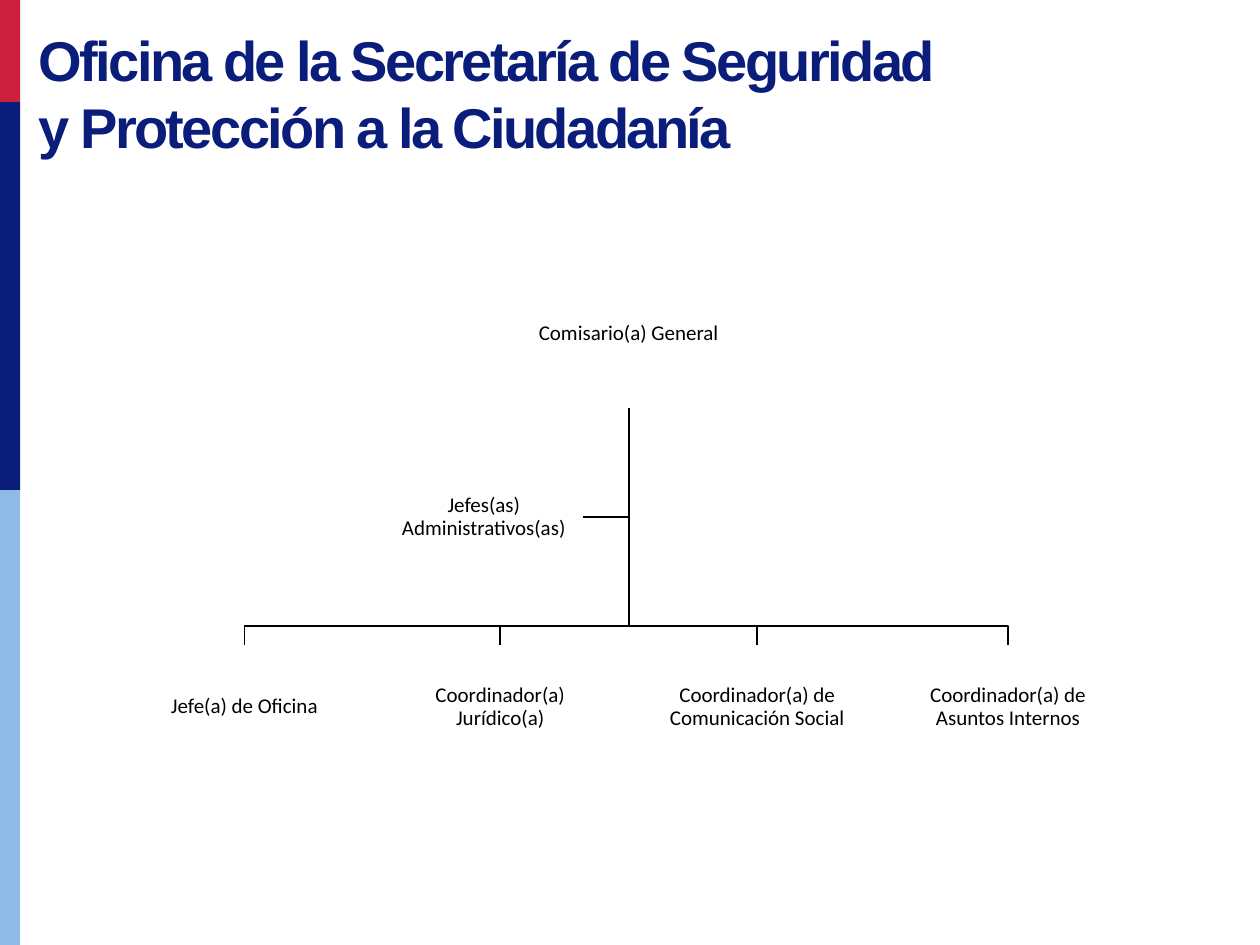
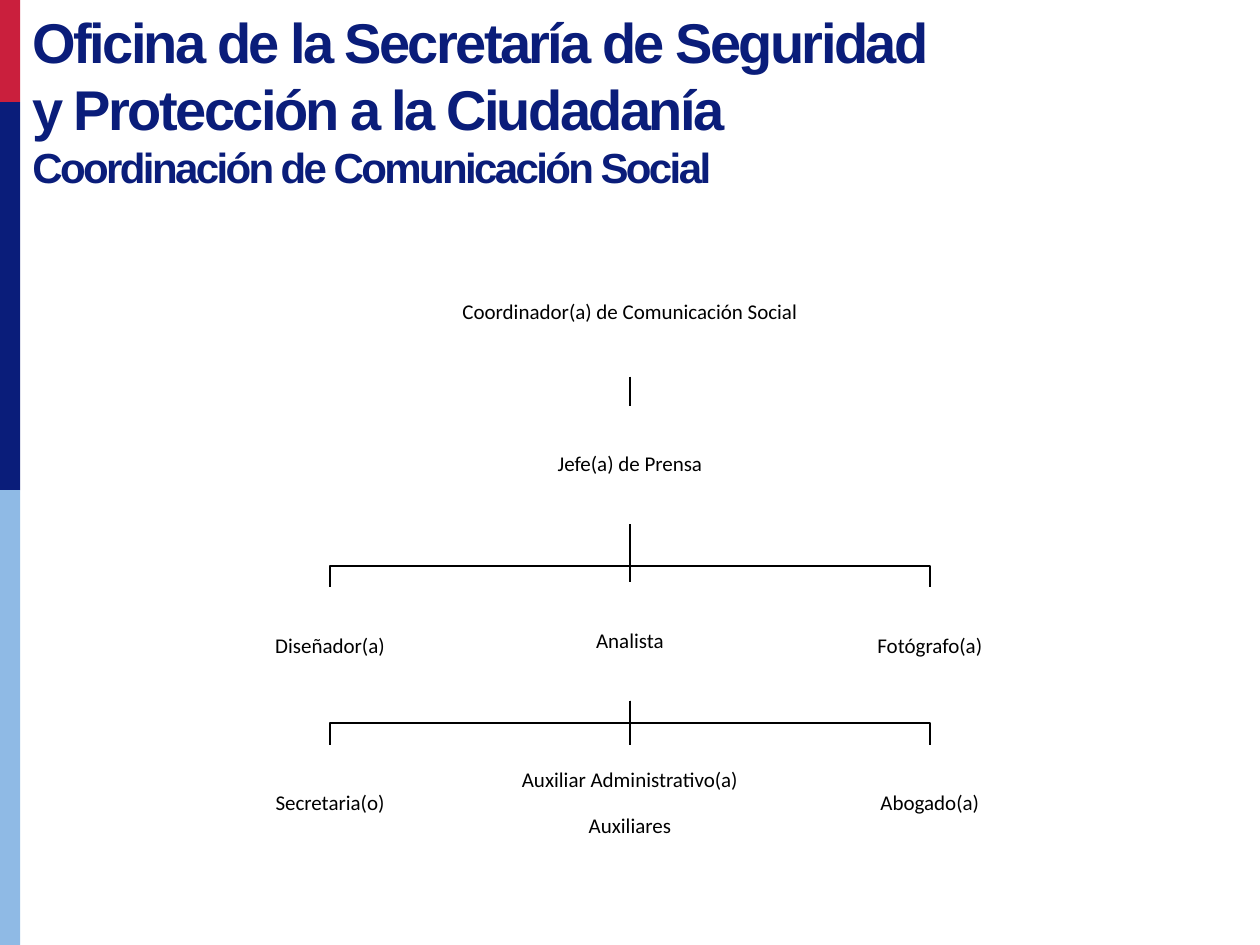
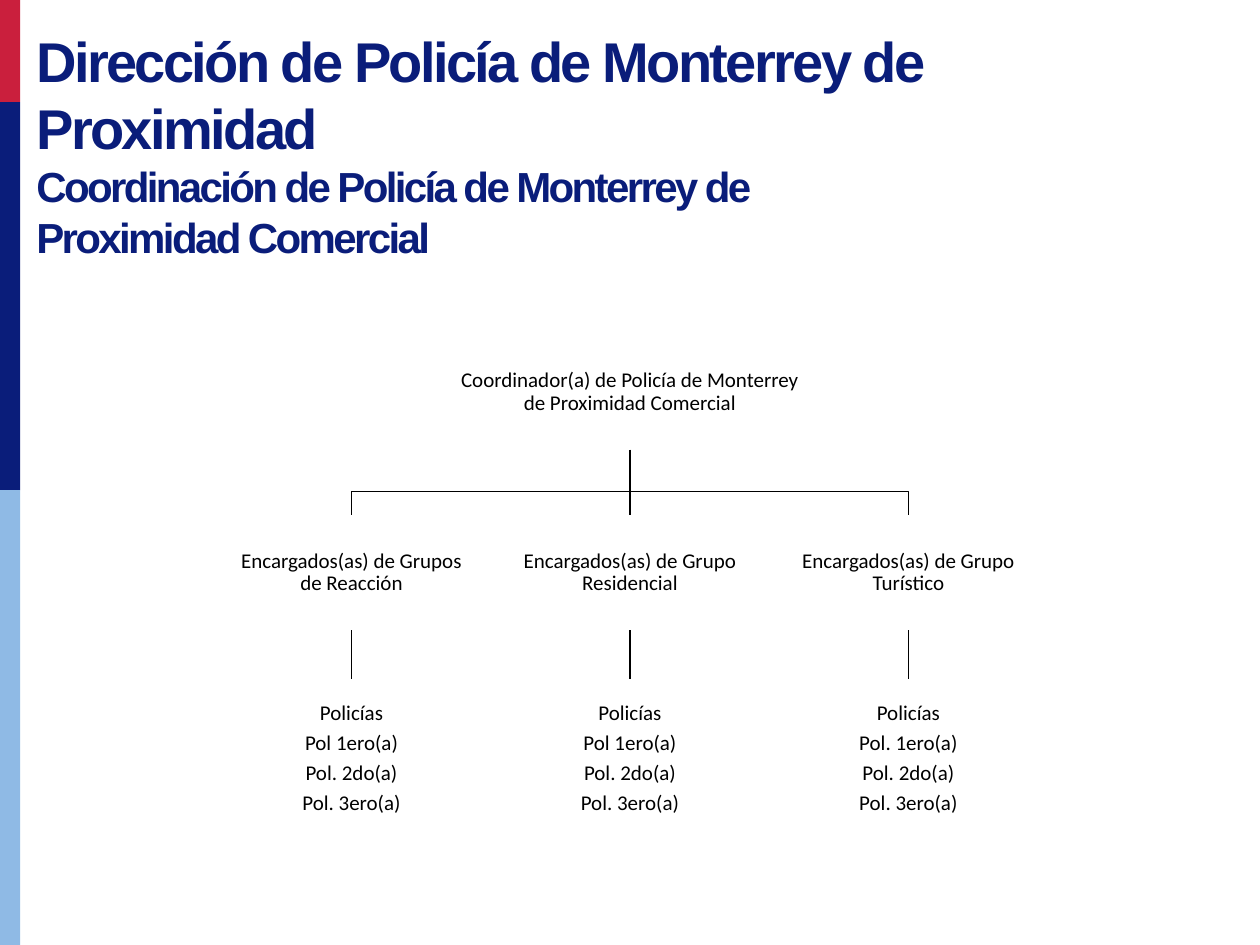
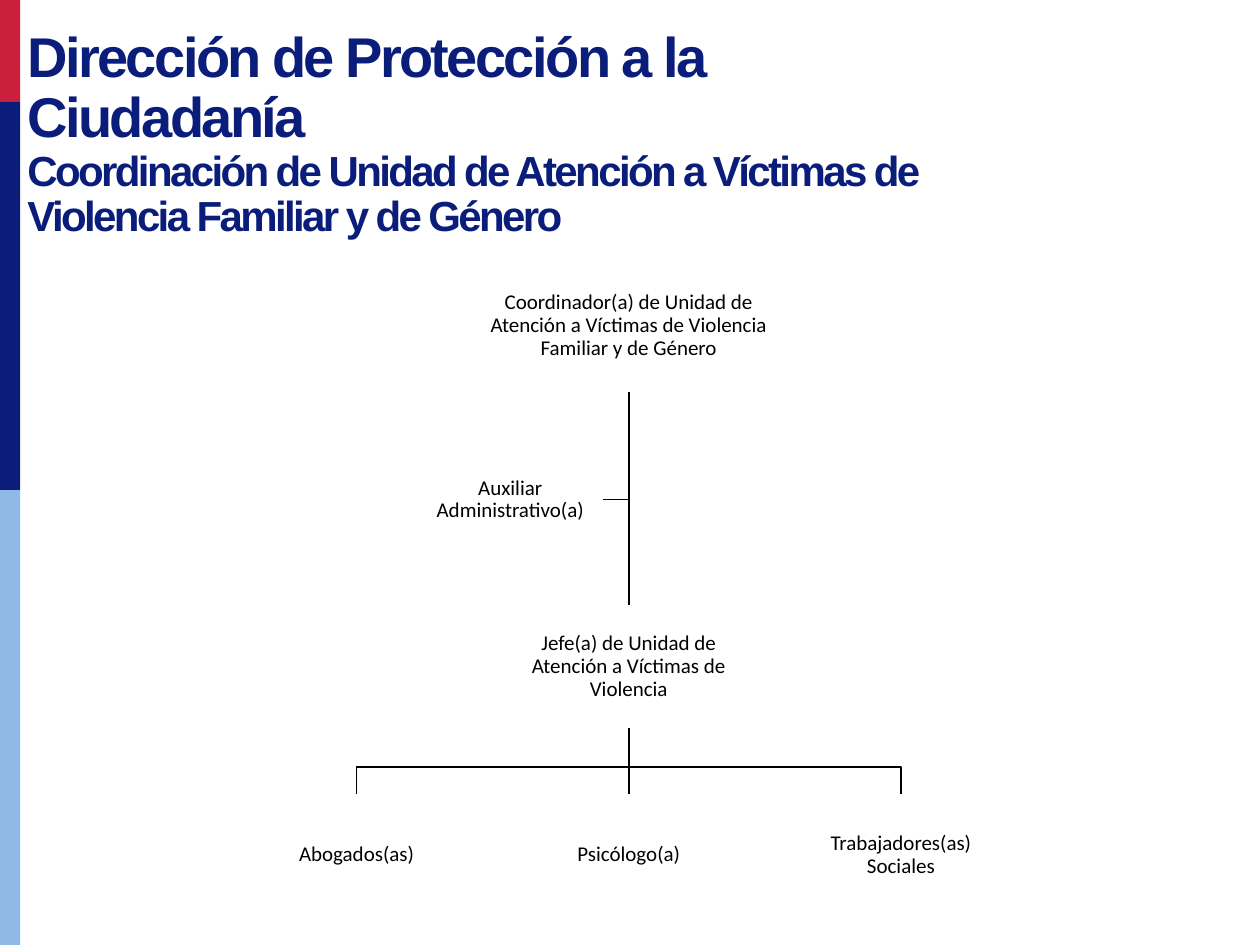
from dataclasses import dataclass

from lxml.etree import SubElement
from pptx import Presentation
from pptx.dml.color import RGBColor
from pptx.enum.shapes import MSO_CONNECTOR, MSO_SHAPE
from pptx.enum.text import MSO_ANCHOR, MSO_AUTO_SIZE, PP_ALIGN
from pptx.oxml.ns import qn
from pptx.util import Inches, Pt


@dataclass(frozen=True)
class Theme:
    red: RGBColor = RGBColor(0xCA, 0x1F, 0x3D)
    navy: RGBColor = RGBColor(0x0A, 0x1D, 0x7A)
    sky: RGBColor = RGBColor(0x8F, 0xBA, 0xE5)
    white: RGBColor = RGBColor(0xFF, 0xFF, 0xFF)
    black: RGBColor = RGBColor(0x00, 0x00, 0x00)
    title_font: str = "Arial"
    node_font: str = "Calibri"
    title_size: int = 32
    subtitle_size: int = 24
    node_size: int = 12
    title_tracking: int = -150
    node_spacing: float = 0.9


class OrgDeck:
    """Holds the theme and the current page of the organisation charts."""

    def __init__(self, theme):
        self.theme = theme
        self.deck = Presentation()
        self.deck.slide_width = Inches(10)
        self.deck.slide_height = Inches(7.5)
        self.page = None

    def new_page(self):
        self.page = self.deck.slides.add_slide(self.deck.slide_layouts[6])
        # Side band in three colours, stacked from top to bottom
        top = 0
        for color, bottom in ((self.theme.red, 0.81), (self.theme.navy, 3.89), (self.theme.sky, 7.5)):
            self.rectangle(0, top, 0.16, bottom - top, color)
            top = bottom

    def rectangle(self, left, top, width, height, color):
        box = self.page.shapes.add_shape(
            MSO_SHAPE.RECTANGLE, Inches(left), Inches(top), Inches(width), Inches(height))
        box.shadow.inherit = False
        box.fill.solid()
        box.fill.fore_color.rgb = color
        box.line.fill.background()
        return box

    def style(self, para, name, size, color, bold=False):
        for span in para.runs:
            span.font.name = name
            span.font.size = Pt(size)
            span.font.bold = bold
            span.font.color.rgb = color

    def title(self, left, top, width, height, heading, subheading=None, spacing=None):
        box = self.page.shapes.add_textbox(
            Inches(left), Inches(top), Inches(width), Inches(height))
        frame = box.text_frame
        frame.word_wrap = True
        frame.auto_size = MSO_AUTO_SIZE.SHAPE_TO_FIT_TEXT
        frame.text = f"{heading}\n{subheading}" if subheading else heading
        sizes = (self.theme.title_size, self.theme.subtitle_size)
        for para, size in zip(frame.paragraphs, sizes):
            para.line_spacing = spacing
            self.style(para, self.theme.title_font, size, self.theme.navy, bold=True)
            for span in para.runs:
                span.font._element.set("spc", str(self.theme.title_tracking))

    def node(self, text, center, top, width, height, gap=0):
        """Position box; gap is the space in points between its paragraphs."""
        box = self.rectangle(center - width / 2, top, width, height, self.theme.white)
        frame = box.text_frame
        frame.word_wrap = True
        frame.vertical_anchor = MSO_ANCHOR.MIDDLE
        frame.margin_left = frame.margin_right = Inches(0.01)
        frame.margin_top = frame.margin_bottom = Inches(0.01)
        frame.text = text
        for index, para in enumerate(frame.paragraphs):
            para.alignment = PP_ALIGN.CENTER
            para.line_spacing = self.theme.node_spacing
            if index and gap:
                para.space_before = Pt(gap)
            self.style(para, self.theme.node_font, self.theme.node_size, self.theme.black)
        return box

    def draw_line(self, line):
        line.color.rgb = self.theme.black
        line.width = Pt(1)

    def link(self, parent, child):
        """Straight line from the bottom of a node to the top of the next."""
        connector = self.page.shapes.add_connector(MSO_CONNECTOR.STRAIGHT, 0, 0, 0, 0)
        connector.begin_connect(parent, 2)
        connector.end_connect(child, 0)
        self.draw_line(connector.line)
        SubElement(connector._element.spPr, qn("a:effectLst"))

    def bent_line(self, start, *points):
        builder = self.page.shapes.build_freeform(*start, scale=1.0)
        builder.add_line_segments(points, close=False)
        outline = builder.convert_to_shape()
        outline.shadow.inherit = False
        outline.fill.background()
        self.draw_line(outline.line)

    def branch(self, parent, children, drop):
        """Link a parent to a row of nodes; the bus runs drop above the row."""
        x, y = parent.left + parent.width // 2, parent.top + parent.height
        for child in children:
            child_x = child.left + child.width // 2
            if abs(child_x - x) < Inches(0.01):
                self.link(parent, child)
            else:
                bus = child.top - Inches(drop)
                self.bent_line((x, y), (x, bus), (child_x, bus), (child_x, child.top))

    def assistant(self, parent, helper):
        """Link a node that stands at the left of the parent's stem."""
        x, y = parent.left + parent.width // 2, parent.top + parent.height
        middle = helper.top + helper.height // 2
        self.bent_line((x, y), (x, middle), (helper.left + helper.width, middle))


OFFICE = "Oficina de la Secretaría de Seguridad y Protección a la Ciudadanía"


def secretariat_office(org):
    org.new_page()
    org.title(0.21, 0.15, 7.35, 1.18, OFFICE)
    chief = org.node("Comisario(a) General", 4.99, 2.06, 2.36, 1.18)
    staff = {
        "Jefe(a) de Oficina": 1.94,
        "Coordinador(a)\nJurídico(a)": 3.97,
        "Coordinador(a) de Comunicación Social": 6.01,
        "Coordinador(a) de Asuntos Internos": 8,
    }
    row = [org.node(text, center, 5.12, 1.72, 0.98) for text, center in staff.items()]
    helper = org.node("Jefes(as) Administrativos(as)", 3.84, 3.67, 1.57, 0.87)
    org.assistant(chief, helper)
    org.branch(chief, row, 0.15)


def social_communication(org):
    org.new_page()
    org.title(0.16, 0.01, 7.46, 1.58, OFFICE, "Coordinación de Comunicación Social")
    middle, step = 5, 2.38
    coordinator = org.node("Coordinador(a) de Comunicación Social", middle, 1.97, 3.3, 1.02)
    press = org.node("Jefe(a) de Prensa", middle, 3.22, 2.36, 0.94)
    designer = org.node("Diseñador(a)", middle - step, 4.66, 2.04, 0.94)
    analyst = org.node("Analista", middle, 4.62, 2.04, 0.94)
    photographer = org.node("Fotógrafo(a)", middle + step, 4.66, 2.04, 0.94)
    support_texts = ("Secretaria(o)", "Auxiliar Administrativo(a)\nAuxiliares", "Abogado(a)")
    support = [org.node(text, middle + step * column, 5.91, 2.04, 0.94, gap=13)
               for column, text in enumerate(support_texts, -1)]
    org.link(coordinator, press)
    org.branch(press, (designer, analyst, photographer), 0.17)
    org.branch(analyst, support, 0.17)


def commercial_police(org):
    org.new_page()
    org.title(0.19, 0.16, 7.46, 1.99, "Dirección de Policía de Monterrey de Proximidad",
              "Coordinación de Policía de Monterrey de Proximidad Comercial")
    middle, step = 5, 2.21
    coordinator = org.node("Coordinador(a) de Policía de Monterrey\vde Proximidad Comercial",
                           middle, 2.66, 3, 0.91)
    groups = (
        ("Encargados(as) de Grupos de Reacción", "Pol"),
        ("Encargados(as) de Grupo Residencial", "Pol"),
        ("Encargados(as) de Grupo Turístico", "Pol."),
    )
    leaders = []
    for column, (leader_text, first_rank) in enumerate(groups, -1):
        center = middle + step * column
        leader = org.node(leader_text, center, 4.09, 1.83, 0.91)
        ranks = f"Policías\n{first_rank} 1ero(a)\nPol. 2do(a)\nPol. 3ero(a)"
        org.link(leader, org.node(ranks, center, 5.39, 1.83, 1.26, gap=4.2))
        leaders.append(leader)
    org.branch(coordinator, leaders, 0.19)


def victim_support(org):
    org.new_page()
    org.title(0.12, 0.18, 7.46, 1.31, "Dirección de Protección a la Ciudadanía",
              "Coordinación de Unidad de Atención a Víctimas de Violencia Familiar y de Género",
              spacing=0.9)
    middle, step = 4.99, 2.16
    coordinator = org.node(
        "Coordinador(a) de Unidad de Atención a Víctimas de Violencia Familiar y de Género",
        middle, 2.06, 2.34, 1.05)
    head = org.node("Jefe(a) de Unidad de Atención a Víctimas de Violencia",
                    middle, 4.8, 1.89, 0.98)
    team_texts = ("Abogados(as)", "Psicólogo(a)", "Trabajadores(as)\vSociales")
    team = [org.node(text, middle + step * column, 6.3, 1.75, 0.97)
            for column, text in enumerate(team_texts, -1)]
    helper = org.node("Auxiliar Administrativo(a)", 4.05, 3.54, 1.47, 0.85)
    org.assistant(coordinator, helper)
    org.link(coordinator, head)
    org.branch(head, team, 0.21)


def main():
    org = OrgDeck(Theme())
    secretariat_office(org)
    social_communication(org)
    commercial_police(org)
    victim_support(org)
    org.deck.save("out.pptx")


if __name__ == "__main__":
    main()
